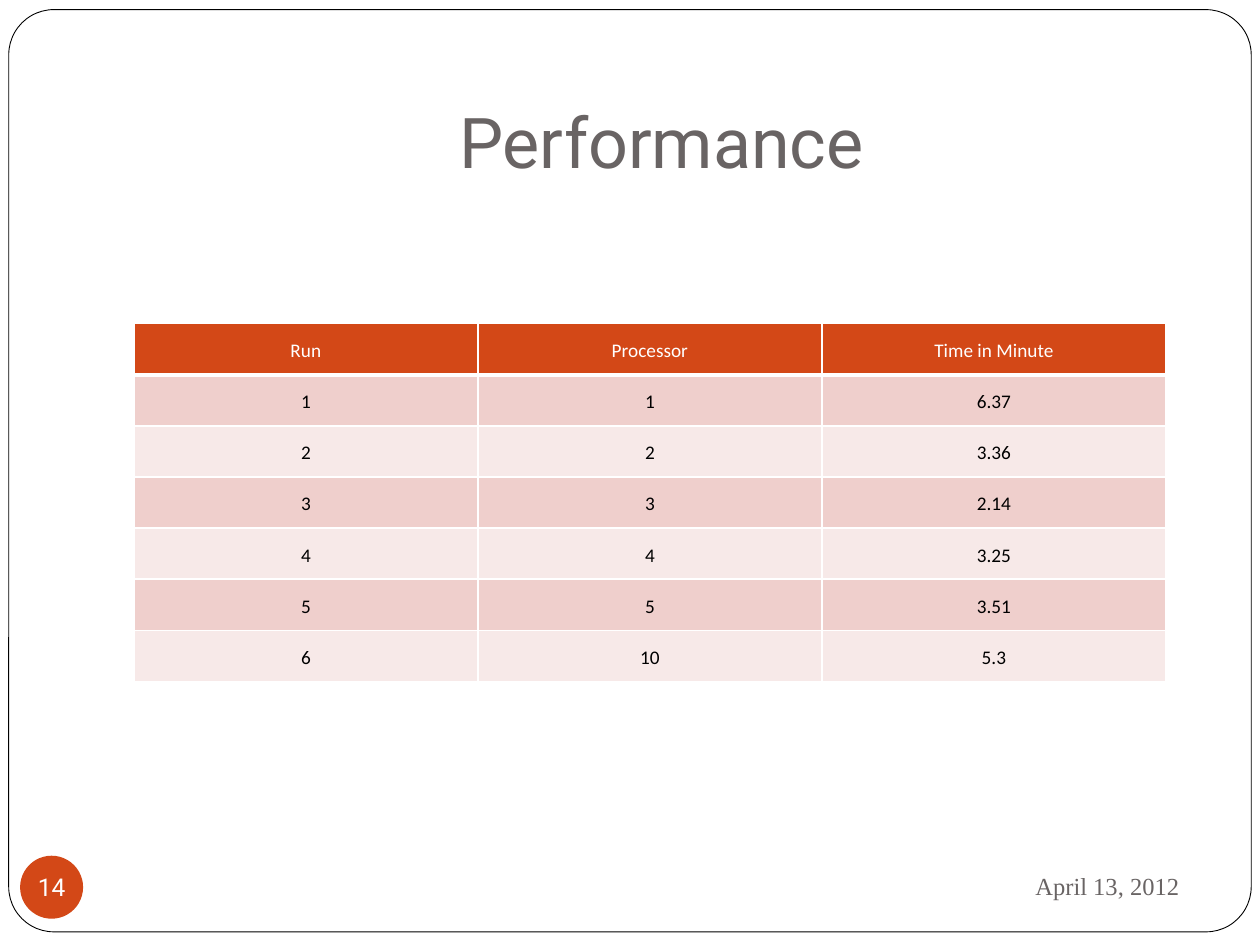
from dataclasses import dataclass

from lxml.etree import SubElement
from pptx import Presentation
from pptx.dml.color import RGBColor
from pptx.enum.shapes import MSO_SHAPE as Shape
from pptx.enum.text import MSO_ANCHOR as Anchor, PP_ALIGN as Align
from pptx.oxml.ns import qn
from pptx.util import Pt


@dataclass(frozen=True)
class Theme:
    white: str = "FFFFFF"
    black: str = "000000"
    grey: str = "696464"
    accent: str = "D34817"
    bands: tuple = ("EFCFCC", "F7E9E8")
    head: str = "Roboto"
    serif: str = "Times New Roman"
    body: str = "Calibri"
    title: int = 40
    note: int = 14
    cell: int = 11


def paint(fill, color):
    fill.solid()
    fill.fore_color.rgb = RGBColor.from_string(color)


def border(cell, widths):
    """Draw white borders on a cell; widths maps side tags to points."""
    props = cell._tc.get_or_add_tcPr()
    for spot, (side, width) in enumerate(widths.items()):
        line = props.makeelement(qn(f"a:{side}"), {"w": str(Pt(width))})
        fill = SubElement(line, qn("a:solidFill"))
        SubElement(fill, qn("a:srgbClr"), val=Theme.white)
        props.insert(spot, line)


class Page:
    def __init__(self, slide, theme):
        self.slide = slide
        self.theme = theme

    def text(self, frame, words, font, size, color, align):
        para = frame.paragraphs[0]
        para.alignment = align
        run = para.add_run()
        run.text = words
        run.font.name = font
        run.font.size = Pt(size)
        run.font.bold = False
        run.font.color.rgb = RGBColor.from_string(color)
        return para

    def shape(self, kind, box, fill, line=None):
        item = self.slide.shapes.add_shape(kind, *map(Pt, box))
        item.shadow.inherit = False
        paint(item.fill, fill)
        if line:
            paint(item.line.fill, line)
            item.line.width = Pt(0.5)
        else:
            item.line.fill.background()
        return item

    def frame(self, box):
        item = self.shape(Shape.ROUNDED_RECTANGLE, box,
                          self.theme.white, self.theme.black)
        item.adjustments[0] = 0.049

    def label(self, box, words, font, size, align, anchor, base=3.6):
        frame = self.slide.shapes.add_textbox(*map(Pt, box)).text_frame
        frame.word_wrap = True
        frame.vertical_anchor = anchor
        frame.margin_bottom = Pt(base)
        self.text(frame, words, font, size, self.theme.grey, align)

    def badge(self, box, words):
        look = self.theme
        frame = self.shape(Shape.OVAL, box, look.accent).text_frame
        frame.margin_left = frame.margin_right = 0
        frame.margin_top = frame.margin_bottom = 0
        frame.word_wrap = False
        frame.vertical_anchor = Anchor.MIDDLE
        self.text(frame, words, look.head, look.note, look.white, Align.CENTER)

    def table(self, left, top, wide, high, rows):
        look = self.theme
        count, cols = len(rows), len(rows[0])
        grid = self.slide.shapes.add_table(
            count, cols, Pt(left), Pt(top),
            Pt(wide * cols), Pt(high * count)).table
        for col in grid.columns:
            col.width = Pt(wide)
        for r, row in enumerate(rows):
            grid.rows[r].height = Pt(high)
            fill = look.bands[(r - 1) % 2] if r else look.accent
            ink = look.black if r else look.white
            sides = {"lnL": 1, "lnR": 1,
                     "lnT": 3 if r == 1 else 1, "lnB": 1 if r else 3}
            for c, words in enumerate(row):
                cell = grid.cell(r, c)
                cell.margin_left = cell.margin_right = Pt(5)
                cell.margin_top = cell.margin_bottom = 0
                cell.vertical_anchor = Anchor.MIDDLE
                paint(cell.fill, fill)
                border(cell, sides)
                para = self.text(cell.text_frame, words, look.body,
                                 look.cell, ink, Align.CENTER)
                para.line_spacing = 1.15


def main():
    deck = Presentation()
    deck.slide_width, deck.slide_height = Pt(720), Pt(540)
    look = Theme()
    page = Page(deck.slides.add_slide(deck.slide_layouts[6]), look)

    page.frame((5, 5.5, 710, 527))
    page.label((72, 21.6, 612, 90), "Performance", look.head, look.title,
               Align.CENTER, Anchor.BOTTOM, base=7.2)
    page.label((486, 487.5, 195, 37.5), "April 13, 2012", look.serif,
               look.note, Align.RIGHT, Anchor.MIDDLE)
    page.badge((11.5, 489, 36, 36), "14")
    page.table(76.5, 185, 196.6, 29.2, [
        ("Run", "Processor", "Time in Minute"),
        ("1", "1", "6.37"),
        ("2", "2", "3.36"),
        ("3", "3", "2.14"),
        ("4", "4", "3.25"),
        ("5", "5", "3.51"),
        ("6", "10", "5.3"),
    ])
    deck.save("out.pptx")


if __name__ == "__main__":
    main()
